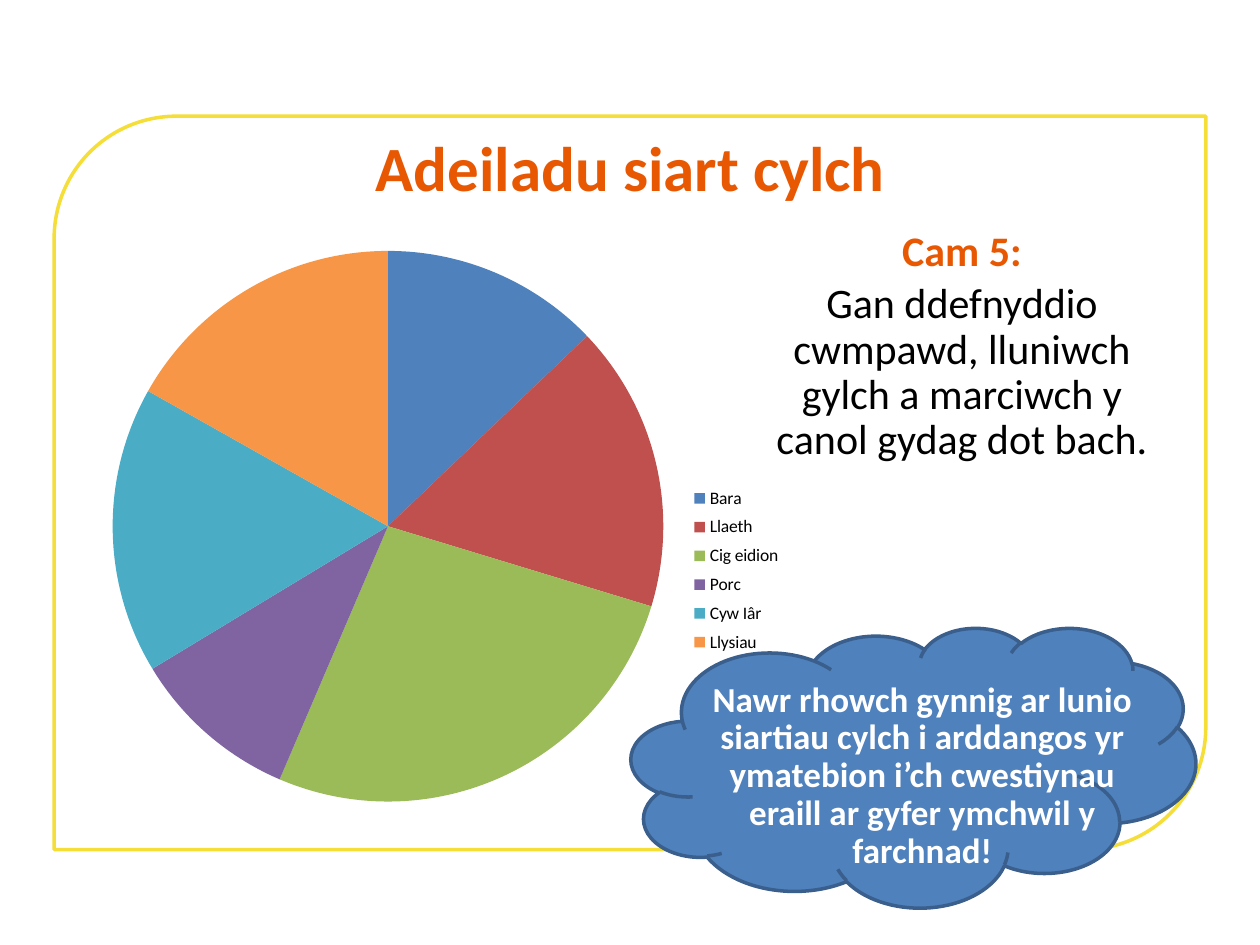
"""Build the slide on drawing a pie chart, step 5."""
from lxml.etree import Element, SubElement
from pptx import Presentation
from pptx.chart.data import CategoryChartData
from pptx.dml.color import RGBColor
from pptx.enum.chart import XL_CHART_TYPE, XL_LEGEND_POSITION
from pptx.enum.shapes import MSO_SHAPE
from pptx.enum.text import MSO_ANCHOR, MSO_AUTO_SIZE, PP_ALIGN
from pptx.oxml.ns import qn
from pptx.util import Inches, Pt

ORANGE = RGBColor(0xE8, 0x58, 0x03)
YELLOW = RGBColor(0xF5, 0xDE, 0x38)
BLUE = RGBColor(0x4F, 0x81, 0xBD)
NAVY = RGBColor(0x3A, 0x5F, 0x8C)
RED = RGBColor(0xC0, 0x50, 0x4D)
GREEN = RGBColor(0x9B, 0xBB, 0x59)
PURPLE = RGBColor(0x80, 0x64, 0xA2)
TEAL = RGBColor(0x4B, 0xAC, 0xC6)
AMBER = RGBColor(0xF7, 0x96, 0x46)
BLACK = RGBColor(0, 0, 0)
WHITE = RGBColor(0xFF, 0xFF, 0xFF)
FONT = "Calibri"

TITLE = [("Adeiladu siart cylch", ORANGE, True)]
STEP = [
    ("Cam 5:", ORANGE, True),
    ("Gan ddefnyddio cwmpawd, lluniwch gylch a marciwch y canol gydag dot bach.", BLACK, False),
]
TASK = [(
    "Nawr rhowch gynnig ar lunio siartiau cylch i arddangos yr ymatebion "
    "i’ch cwestiynau eraill ar gyfer ymchwil y farchnad!", WHITE, True)]
FOODS = [
    ("Bara", 13, BLUE),
    ("Llaeth", 17, RED),
    ("Cig eidion", 27, GREEN),
    ("Porc", 10, PURPLE),
    ("Cyw Iâr", 17, TEAL),
    ("Llysiau", 17, AMBER),
]

WIDE, HIGH = 10, 7.5
AREAS = {
    "frame": (0.043, 0.123, 0.914, 0.776),
    "title": (0.146, 0.123, 0.709, 0.105),
    "step": (0.602, 0.237, 0.323, 0.62),
    "chart": (-0.004, 0.247, 0.709, 0.62),
    "cloud": (0.501, 0.664, 0.448, 0.296),
    "task": (0.547, 0.715, 0.37, 0.216),
}
PIE = (0.13, 0.03, 0.62, 0.94)
KEY = (0.76, 0.42, 0.14, 0.31)


def area(name):
    """Turn the shares of an area into lengths."""
    return [Inches(part * side) for part, side in zip(AREAS[name], (WIDE, HIGH) * 2)]


def place(shape, name):
    """Move a placeholder to its area."""
    shape.left, shape.top, shape.width, shape.height = area(name)


def write(shape, lines, size, spacing=None, gap=0):
    """Fill a text frame with centred paragraphs."""
    frame = shape.text_frame
    frame.word_wrap = True
    frame.auto_size = MSO_AUTO_SIZE.NONE
    frame.text = "\n".join(text for text, _, _ in lines)
    for row, (para, (_, color, bold)) in enumerate(zip(frame.paragraphs, lines)):
        props = para._p.get_or_add_pPr()
        props.set("marL", "0")
        props.set("indent", "0")
        SubElement(props, qn("a:buNone"))
        para.alignment = PP_ALIGN.CENTER
        para.line_spacing = spacing
        para.space_before = Pt(gap if row else 0)
        for run in para.runs:
            font = run.font
            font.name, font.size, font.bold = FONT, Pt(size), bold
            font.color.rgb = color


def outline(slide, kind, name, fill, line):
    """Add a filled preset shape with a border."""
    shape = slide.shapes.add_shape(kind, *area(name))
    shape.shadow.inherit = False
    shape.fill.solid()
    shape.fill.fore_color.rgb = fill
    shape.line.color.rgb = line
    shape.line.width = Pt(2)
    return shape


def arrange(node, spot, box, inner=False):
    """Fix part of a chart at shares of the chart's size."""
    for old in node.findall(qn("c:layout")):
        node.remove(old)
    layout = Element(qn("c:layout"))
    manual = SubElement(layout, qn("c:manualLayout"))
    pairs = [("layoutTarget", "inner")] if inner else []
    pairs += [("xMode", "edge"), ("yMode", "edge"), *zip("xywh", box)]
    for tag, value in pairs:
        SubElement(manual, qn(f"c:{tag}")).set("val", str(value))
    node.insert(spot, layout)


def draw_pie(slide):
    """Add the pie chart of foods."""
    data = CategoryChartData()
    data.categories = [name for name, _, _ in FOODS]
    data.add_series("Series 1", [value for _, value, _ in FOODS])
    chart = slide.shapes.add_chart(XL_CHART_TYPE.PIE, *area("chart"), data).chart
    chart.has_title = False
    chart.font.name, chart.font.size = FONT, Pt(10)
    chart.font.color.rgb = BLACK
    chart.has_legend = True
    chart.legend.position = XL_LEGEND_POSITION.RIGHT
    chart.legend.include_in_layout = False
    root = chart._chartSpace
    arrange(root.find(".//" + qn("c:plotArea")), 0, PIE, True)
    arrange(root.find(".//" + qn("c:legend")), 1, KEY)
    plot = chart.plots[0]
    plot.vary_by_categories = True
    for spot, (_, _, color) in enumerate(FOODS):
        fill = plot.series[0].points[spot].format.fill
        fill.solid()
        fill.fore_color.rgb = color


def main():
    """Assemble and save the slide."""
    deck = Presentation()
    deck.slide_width, deck.slide_height = Inches(WIDE), Inches(HIGH)
    slide = deck.slides.add_slide(deck.slide_layouts[1])
    title, body = slide.placeholders
    frame = outline(slide, MSO_SHAPE.ROUND_2_DIAG_RECTANGLE, "frame", WHITE, YELLOW)
    title.element.addprevious(frame.element)
    place(title, "title")
    write(title, TITLE, 36)
    title.text_frame.vertical_anchor = MSO_ANCHOR.MIDDLE
    place(body, "step")
    write(body, STEP, 24, 0.9, 4)
    draw_pie(slide)
    outline(slide, MSO_SHAPE.CLOUD, "cloud", BLUE, NAVY)
    write(slide.shapes.add_textbox(*area("task")), TASK, 20, 0.9)
    deck.save("out.pptx")


if __name__ == "__main__":
    main()
